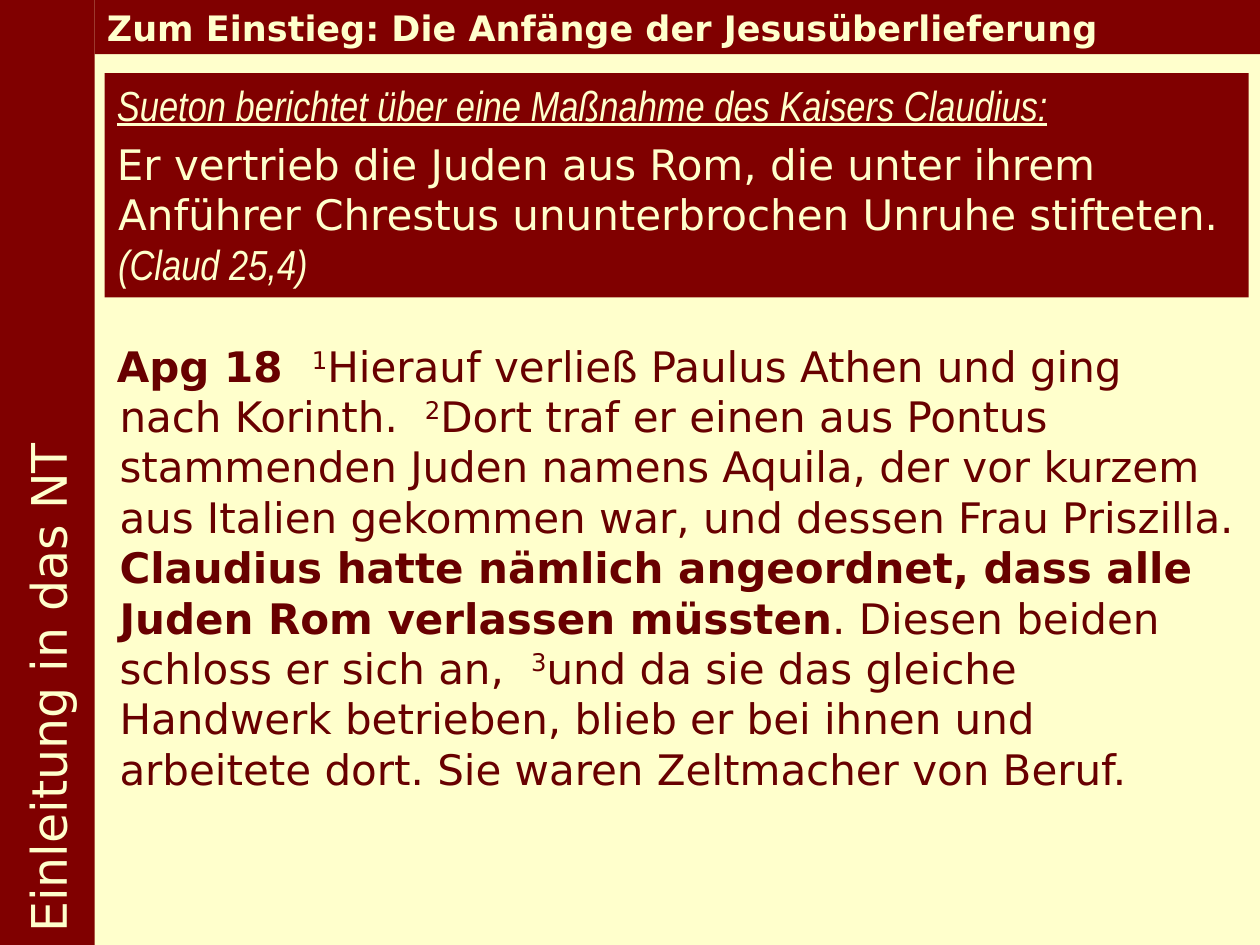
import pptx
import pptx.dml.color
import pptx.enum.shapes
import pptx.enum.text
import pptx.oxml.ns
import pptx.util
from lxml import etree

WIDTH, HEIGHT = 10, 7.5
COLORS = {"paper": "FFFFCC", "band": "800000", "verse": "680000"}
BODY, NARROW = "DejaVu Sans", "Arial Narrow"
ALIGN = pptx.enum.text.PP_ALIGN
ANCHOR = pptx.enum.text.MSO_ANCHOR
FIT = pptx.enum.text.MSO_AUTO_SIZE

SIDEBAR = (0, 0, 0.075 * WIDTH, HEIGHT)
HEADING = (0.075 * WIDTH, 0, 0.925 * WIDTH, 0.43)
QUOTE = (0.083 * WIDTH, 0.58, 9.08, 1.78)
PASSAGE = (0.083 * WIDTH, 2.65, 9.09, 3.74)


def rgb(name):
    return pptx.dml.color.RGBColor.from_string(COLORS[name])


def apply(target, values):
    for attribute, value in values.items():
        setattr(target, attribute, value)


def add_band(slide, box):
    band = slide.shapes.add_shape(
        pptx.enum.shapes.MSO_SHAPE.RECTANGLE, *map(pptx.util.Inches, box))
    band.shadow.inherit = False
    band.fill.solid()
    band.fill.fore_color.rgb = rgb("band")
    band.line.fill.background()
    return band


def write(region, paragraphs, size, color, before=0, hanging=0, align=ALIGN.LEFT):
    """Fill a region with paragraphs, each a list of (text, font values, raised).

    before is the space above in percent, hanging the indent in inches.
    """
    frame = region.text_frame
    apply(frame, {"word_wrap": True, "vertical_anchor": ANCHOR.TOP,
                  "auto_size": FIT.SHAPE_TO_FIT_TEXT})
    for number, runs in enumerate(paragraphs):
        paragraph = frame.add_paragraph() if number else frame.paragraphs[0]
        paragraph.alignment = align
        properties = paragraph._p.get_or_add_pPr()
        if hanging:
            indent = pptx.util.Inches(hanging)
            properties.set("marL", str(indent))
            properties.set("indent", str(-indent))
        if before:
            spacing = etree.SubElement(properties, pptx.oxml.ns.qn("a:spcBef"))
            percent = etree.SubElement(spacing, pptx.oxml.ns.qn("a:spcPct"))
            percent.set("val", str(before * 1000))
        for text, values, raised in runs:
            run = paragraph.add_run()
            run.text = text
            apply(run.font, {"name": BODY, "size": pptx.util.Pt(size), **values})
            run.font.color.rgb = rgb(color)
            if raised:
                run.font._element.set("baseline", "30000")


def plain(text, **values):
    return text, values, False


def verse(number):
    return number, {}, True


def add_heading(slide, box):
    write(add_band(slide, box),
          [[plain("Zum Einstieg: Die Anfänge der Jesusüberlieferung", bold=True)]],
          20, "paper", before=50)


def add_quote(slide, box):
    source = {"name": NARROW, "italic": True}
    write(add_band(slide, box), [
        [plain("Sueton berichtet über eine Maßnahme des Kaisers Claudius:",
               underline=True, **source)],
        [plain("Er vertrieb die Juden aus Rom, die unter ihrem Anführer "
               "Chrestus ununterbrochen Unruhe stifteten. "),
         plain("(Claud 25,4)", **source)],
    ], 24, "paper", before=20, hanging=0.01)


def add_passage(slide, box):
    passage = slide.shapes.add_textbox(*map(pptx.util.Inches, box))
    write(passage, [[
        plain("Apg 18  ", bold=True),
        verse("1"),
        plain("Hierauf verließ Paulus Athen und ging nach Korinth.  "),
        verse("2"),
        plain("Dort traf er einen aus Pontus stammenden Juden namens Aquila, der "
              "vor kurzem aus Italien gekommen war, und dessen Frau Priszilla. "),
        plain("Claudius hatte nämlich angeordnet, dass alle Juden Rom verlassen "
              "müssten", bold=True),
        plain(". Diesen beiden schloss er sich an,  "),
        verse("3"),
        plain("und da sie das gleiche Handwerk betrieben, blieb er bei ihnen und "
              "arbeitete dort. Sie waren Zeltmacher von Beruf."),
    ]], 24, "verse", before=30, hanging=0.02)


def add_sidebar(slide, box):
    """Band whose title reads from bottom to top."""
    sidebar = add_band(slide, box)
    sidebar.rotation = 180
    write(sidebar, [[plain("Einleitung in das NT")]], 28, "paper", align=ALIGN.CENTER)
    apply(sidebar.text_frame, {"word_wrap": False, "auto_size": FIT.NONE,
                               "vertical_anchor": ANCHOR.MIDDLE})
    sidebar.text_frame._txBody.bodyPr.set("vert", "eaVert")


def main():
    deck = pptx.Presentation()
    apply(deck, {"slide_width": pptx.util.Inches(WIDTH),
                 "slide_height": pptx.util.Inches(HEIGHT)})
    slide = deck.slides.add_slide(deck.slide_layouts[6])
    slide.background.fill.solid()
    slide.background.fill.fore_color.rgb = rgb("paper")
    add_heading(slide, HEADING)
    add_quote(slide, QUOTE)
    add_passage(slide, PASSAGE)
    add_sidebar(slide, SIDEBAR)
    deck.save("out.pptx")


if __name__ == "__main__":
    main()
